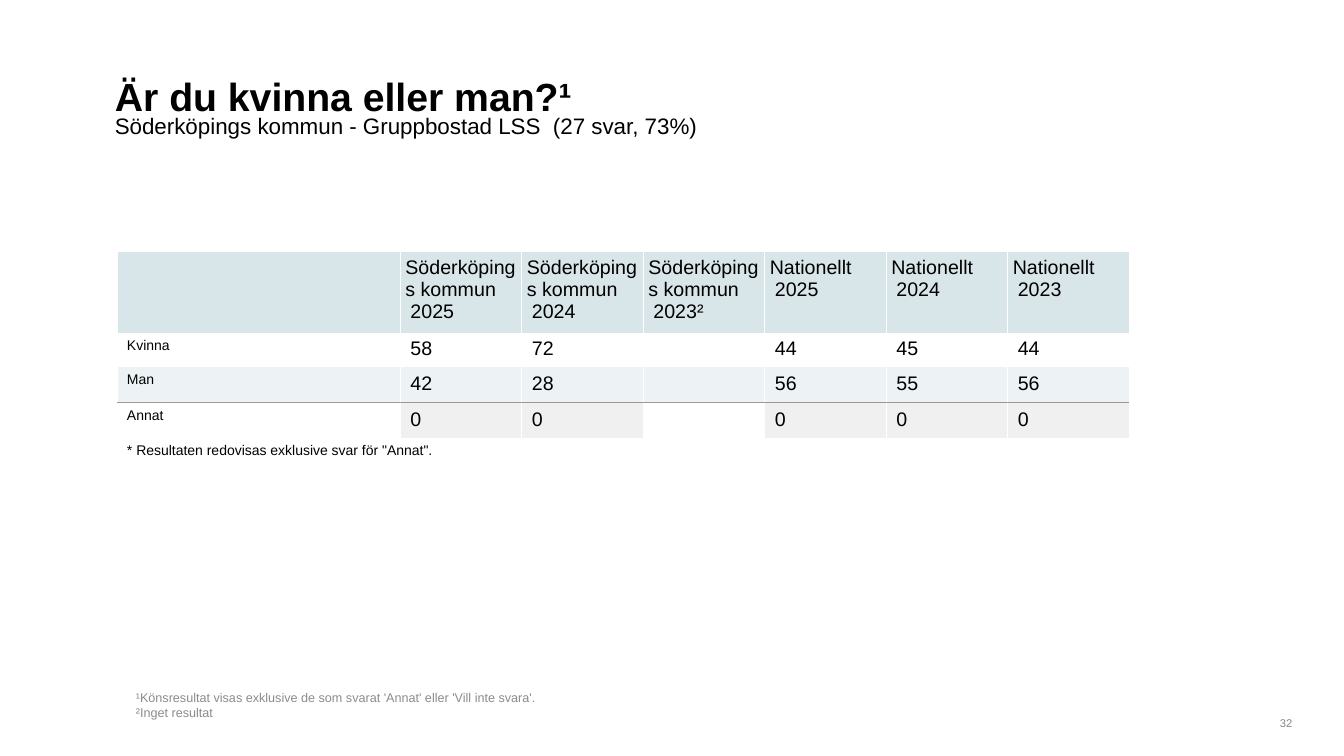
from pptx import Presentation
from pptx import util as u
from pptx.dml.color import RGBColor
from pptx.enum import text
from pptx.oxml import ns
from lxml import etree

BLACK = RGBColor(0x00, 0x00, 0x00)
WHITE = RGBColor(0xFF, 0xFF, 0xFF)
NOTE_GREY = RGBColor(0x8C, 0x8C, 0x8C)
NUMBER_GREY = RGBColor(0x89, 0x89, 0x89)
HEADER_BLUE = RGBColor(0xD9, 0xE6, 0xE9)
BAND_BLUE = RGBColor(0xED, 0xF3, 0xF4)
RULE_GREY = RGBColor(0x99, 0x99, 0x99)
OTHER_GREY = RGBColor(0xF0, 0xF0, 0xF0)

FONT = "Arial"
INSET = 3.6
PLAIN_STYLE = "{2D5ABB26-0587-4C30-8999-92F81FD0307C}"

HEADERS = [("Söderköpings kommun", year) for year in ("2025", "2024", "2023²")]
HEADERS += [("Nationellt", year) for year in ("2025", "2024", "2023")]
# Label, values, fill of the label cell, fill of the value cells
ANSWERS = {
    1: ("Kvinna", ["58", "72", "", "44", "45", "44"], None, None),
    2: ("Man", ["42", "28", "", "56", "55", "56"], BAND_BLUE, BAND_BLUE),
    4: ("Annat", ["0", "0", "", "0", "0", "0"], None, OTHER_GREY),
}
RULE_ROW, REMARK_ROW = 3, 5
COLUMN_WIDTHS = [202.5] + [86.78] * 6
ROW_HEIGHTS = [57.9, 24.5, 24.5, 1.2, 24.5, 19]


def set_all(target, values):
    for name, value in values.items():
        setattr(target, name, value)


def add_span(para, words, size, color=BLACK, bold=False):
    span = para.add_run()
    span.text = words
    set_all(span.font, {"name": FONT, "size": u.Pt(size), "bold": bold})
    span.font.color.rgb = color


def fill_box(box, place, lines, size, color=BLACK, bold=False, top=INSET,
             anchor=text.MSO_ANCHOR.TOP, align=text.PP_ALIGN.LEFT):
    """Place a title or text box and write one paragraph per line."""
    set_all(box, dict(zip(("left", "top", "width", "height"), map(u.Pt, place))))
    frame = box.text_frame
    set_all(frame, {
        "word_wrap": True, "auto_size": text.MSO_AUTO_SIZE.NONE,
        "vertical_anchor": anchor, "margin_top": u.Pt(top),
        "margin_bottom": u.Pt(INSET), "margin_left": u.Pt(7.2),
        "margin_right": u.Pt(7.2)})
    for index, line in enumerate(lines):
        para = frame.paragraphs[0] if index == 0 else frame.add_paragraph()
        para.alignment = align
        add_span(para, line, size, color, bold)


def add_heading(page, left, top, width, height):
    fill_box(page.shapes.title, (left, top, width, height),
             ["Är du kvinna eller man?¹"], 28, bold=True, top=7.2)
    subtitle = page.shapes.add_textbox(0, 0, 0, 0)
    fill_box(subtitle, (left, top + height, width, height),
             ["Söderköpings kommun - Gruppbostad LSS  (27 svar, 73%)"], 16, top=5)


def add_side_borders(cell):
    """Draw white lines on the left and right of a cell, before its fill."""
    properties = cell._tc.get_or_add_tcPr()
    for position, side in enumerate(("a:lnL", "a:lnR")):
        line = etree.Element(ns.qn(side), w=str(u.Pt(1)))
        solid = etree.SubElement(line, ns.qn("a:solidFill"))
        etree.SubElement(solid, ns.qn("a:srgbClr"), val=str(WHITE))
        properties.insert(position, line)


def style_cell(cell, fill=None, inset=INSET, borders=True):
    for side in ("left", "right", "top", "bottom"):
        setattr(cell, f"margin_{side}", u.Pt(inset))
    if fill is None:
        cell.fill.background()
    else:
        cell.fill.solid()
        cell.fill.fore_color.rgb = fill
    if borders:
        add_side_borders(cell)


def write_cell(cell, lines, size, indents=(INSET,)):
    """Write lines with their indents; an empty line still gets its size."""
    frame = cell.text_frame
    for index, (line, indent) in enumerate(zip(lines, indents)):
        para = frame.paragraphs[0] if index == 0 else frame.add_paragraph()
        para._p.get_or_add_pPr().set("marL", str(u.Pt(indent)))
        if line:
            add_span(para, line, size)
        else:
            etree.SubElement(para._p, ns.qn("a:endParaRPr"), sz=str(size * 100))


def add_answer_table(page, left, top):
    frame = page.shapes.add_table(
        len(ROW_HEIGHTS), len(COLUMN_WIDTHS), u.Pt(left), u.Pt(top),
        u.Pt(sum(COLUMN_WIDTHS)), u.Pt(sum(ROW_HEIGHTS)))
    table = frame.table
    set_all(table, {"first_row": False, "horz_banding": False})
    table._tbl.tblPr.find(ns.qn("a:tableStyleId")).text = PLAIN_STYLE
    for column, width in zip(table.columns, COLUMN_WIDTHS):
        column.width = u.Pt(width)
    for row, height in zip(table.rows, ROW_HEIGHTS):
        row.height = u.Pt(height)

    for column, lines in enumerate([("",)] + HEADERS):
        style_cell(table.cell(0, column), HEADER_BLUE)
        write_cell(table.cell(0, column), lines, 14, (0, INSET))

    for row, (label, values, label_fill, value_fill) in ANSWERS.items():
        style_cell(table.cell(row, 0), label_fill)
        write_cell(table.cell(row, 0), [label], 10)
        for column, value in enumerate(values, 1):
            cell = table.cell(row, column)
            style_cell(cell, value_fill if value else label_fill)
            write_cell(cell, [value], 14)

    last = len(COLUMN_WIDTHS) - 1
    remark = '* Resultaten redovisas exklusive svar för "Annat".'
    for row, words, size, fill, inset in (
            (RULE_ROW, "", 1, RULE_GREY, 0),
            (REMARK_ROW, remark, 10, None, INSET)):
        for column in range(last + 1):
            cell = table.cell(row, column)
            style_cell(cell, fill, inset, borders=False)
            write_cell(cell, [words if column == 0 else ""], size)
        table.cell(row, 0).merge(table.cell(row, last))


def add_footer(page, left, top, width, height):
    notes = page.shapes.add_textbox(0, 0, 0, 0)
    fill_box(notes, (left, top, width, height),
             ["¹Könsresultat visas exklusive de som svarat 'Annat' eller "
              "'Vill inte svara'.", "²Inget resultat"],
             9, NOTE_GREY, anchor=text.MSO_ANCHOR.BOTTOM)
    number = page.shapes.add_textbox(0, 0, 0, 0)
    fill_box(number, (left + 810, top + height - 7.9, 30.2, 15.1), ["32"], 8,
             NUMBER_GREY, anchor=text.MSO_ANCHOR.BOTTOM,
             align=text.PP_ALIGN.RIGHT)


def main():
    deck = Presentation()
    set_all(deck, {"slide_width": u.Pt(960), "slide_height": u.Pt(540)})
    page = deck.slides.add_slide(deck.slide_layouts.get_by_name("Title Only"))
    add_heading(page, 74.9, 44.6, 810, 30.2)
    add_answer_table(page, 83.5, 180)
    add_footer(page, 90, 232.6, 547.2, 285.1)
    deck.save("out.pptx")


if __name__ == "__main__":
    main()
